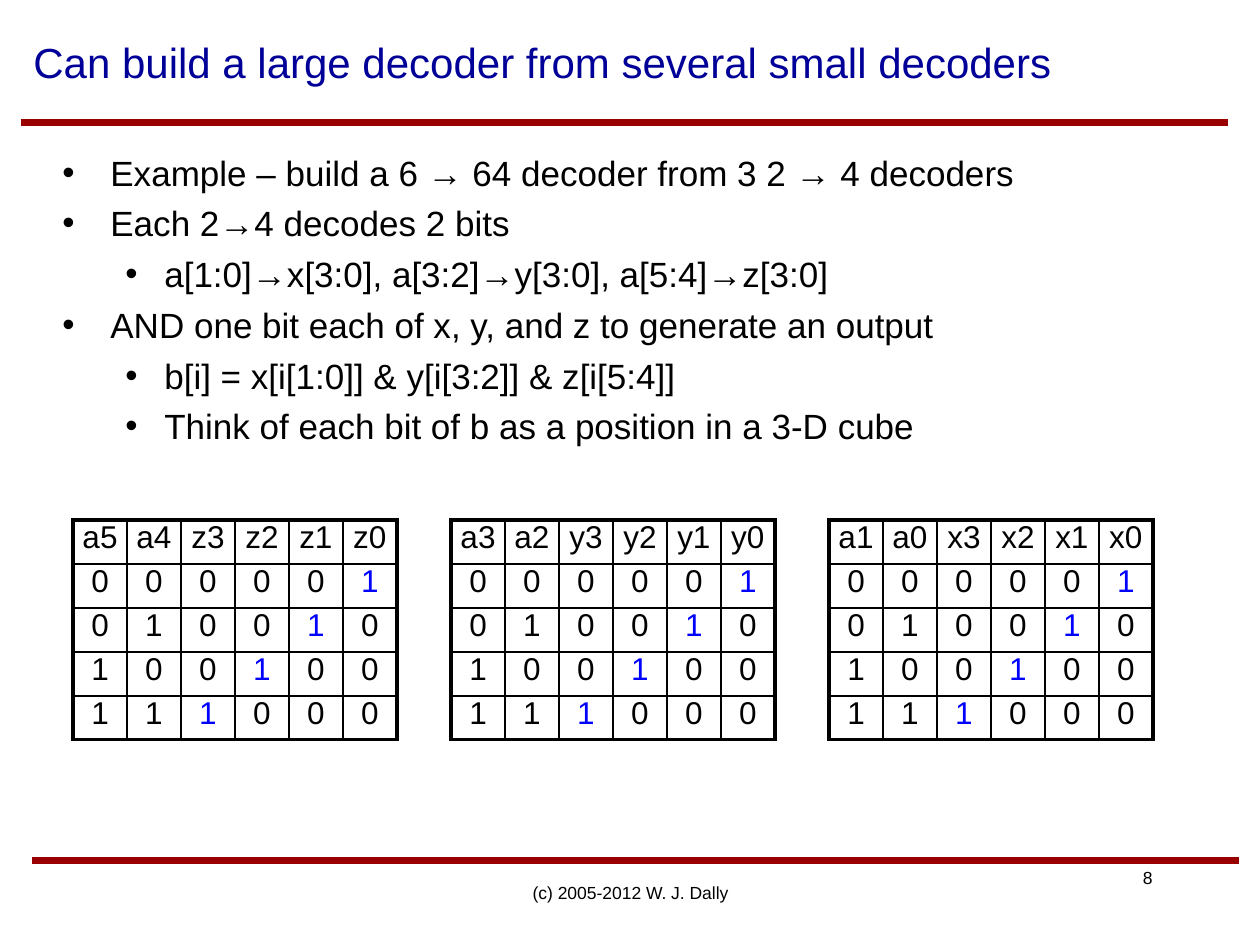
from lxml import etree
from pptx import Presentation
from pptx.dml.color import RGBColor
from pptx.enum.shapes import MSO_CONNECTOR
from pptx.enum.text import MSO_ANCHOR, PP_ALIGN
from pptx.oxml.ns import qn
from pptx.util import Pt

# Content
TITLE = "Can build a large decoder from several small decoders"
BULLETS = [  # (level, text)
    (0, "Example – build a 6 → 64 decoder from 3 2 → 4 decoders"),
    (0, "Each 2→4 decodes 2 bits"),
    (1, "a[1:0]→x[3:0], a[3:2]→y[3:0], a[5:4]→z[3:0]"),
    (0, "AND one bit each of x, y, and z to generate an output"),
    (1, "b[i] = x[i[1:0]] & y[i[3:2]] & z[i[5:4]]"),
    (1, "Think of each bit of b as a position in a 3-D cube"),
]
DECODER_HEADERS = [
    ["a5", "a4", "z3", "z2", "z1", "z0"],
    ["a3", "a2", "y3", "y2", "y1", "y0"],
    ["a1", "a0", "x3", "x2", "x1", "x0"],
]
TRUTH_ROWS = ["000001", "010010", "100100", "111000"]
FOOTER = "(c) 2005-2012 W. J. Dally"
PAGE_NUMBER = "8"

# Look
COLORS = {"title": "000099", "rule": "990000", "text": "000000", "hot": "0000FF"}
FONT = "Arial"
LEFT, CENTER, RIGHT = PP_ALIGN.LEFT, PP_ALIGN.CENTER, PP_ALIGN.RIGHT
TOP, MIDDLE = MSO_ANCHOR.TOP, MSO_ANCHOR.MIDDLE
STRAIGHT = MSO_CONNECTOR.STRAIGHT

# Layout in px
PX_PER_INCH = 126
SLIDE_W, SLIDE_H = 1260, 945
RULES = [(21, 123), (32, 861)]  # left, y
RULE_W = 1207
TABLE_X, TABLE_Y, TABLE_PITCH = 73, 520, 378
COL_W, ROW_H = 54, 44
INPUT_COLS = 2
INDENTS = [(48, 48), (102, 39)]  # left margin, hanging, by level
THIN, THICK = 1, 2.25


def px(n):
    return round(n * 914400 / PX_PER_INCH)


def style(paragraph, size, color, align=LEFT):
    paragraph.alignment = align
    font = paragraph.font
    font.name, font.size, font.bold = FONT, Pt(size), False
    font.color.rgb = RGBColor.from_string(COLORS[color])


def add_text(slide, box, text, size, color="text", align=LEFT, anchor=TOP, wrap=True):
    frame = slide.shapes.add_textbox(*map(px, box)).text_frame
    frame.word_wrap = wrap
    frame.vertical_anchor = anchor
    frame.text = text
    for paragraph in frame.paragraphs:
        style(paragraph, size, color, align)
    return frame


def add_bullet(paragraph, level):
    margin, hanging = INDENTS[level]
    paragraph.level = level
    paragraph.space_before = Pt(5)
    props = paragraph._p.get_or_add_pPr()
    props.set("marL", str(px(margin)))
    props.set("indent", str(-px(hanging)))
    etree.SubElement(props, qn("a:buFont"), typeface=FONT)
    etree.SubElement(props, qn("a:buChar"), char="•")


def set_borders(cell, widths):
    props = cell._tc.get_or_add_tcPr()
    for position, (side, width) in enumerate(widths.items()):
        line = etree.Element(qn(f"a:ln{side}"), w=str(Pt(width)))
        fill = etree.SubElement(line, qn("a:solidFill"))
        etree.SubElement(fill, qn("a:srgbClr"), val=COLORS["text"])
        props.insert(position, line)


def add_decoder_table(slide, left, rows):
    last_row, last_col = len(rows) - 1, len(rows[0]) - 1
    size = (COL_W * (last_col + 1), ROW_H * (last_row + 1))
    table = slide.shapes.add_table(
        last_row + 1, last_col + 1, *map(px, (left, TABLE_Y, *size))).table
    table.first_row = table.horz_banding = False
    for column in table.columns:
        column.width = px(COL_W)
    for r, row in enumerate(rows):
        table.rows[r].height = px(ROW_H)
        for c, value in enumerate(row):
            cell = table.cell(r, c)
            cell.margin_left = cell.margin_right = 0
            cell.margin_top = cell.margin_bottom = 0
            cell.text = value
            hot = value == "1" and c >= INPUT_COLS
            style(cell.text_frame.paragraphs[0], 18, "hot" if hot else "text", CENTER)
            cell.fill.background()
            outer = {"L": c == 0, "R": c == last_col, "T": r == 0, "B": r == last_row}
            set_borders(cell, {s: THICK if edge else THIN for s, edge in outer.items()})


def main():
    deck = Presentation()
    deck.slide_width, deck.slide_height = px(SLIDE_W), px(SLIDE_H)
    slide = deck.slides.add_slide(deck.slide_layouts[6])

    # Red rules above and below the content
    for left, y in RULES:
        rule = slide.shapes.add_connector(STRAIGHT, *map(px, (left, y, left + RULE_W, y)))
        rule.line.color.rgb = RGBColor.from_string(COLORS["rule"])
        rule.line.width = Pt(4)
        etree.SubElement(rule._element.spPr, qn("a:effectLst"))

    # Page number, footer and title
    add_text(slide, (945, 861, 220, 34), PAGE_NUMBER, 10, align=RIGHT)
    add_text(slide, (431, 861, 399, 63), FOOTER, 10, align=CENTER, anchor=MIDDLE, wrap=False)
    add_text(slide, (21, 0, 1239, 124), TITLE, 24, "title", anchor=MIDDLE)

    # Bullets
    body = add_text(slide, (50, 145, 1071, 615), "\n".join(t for _, t in BULLETS), 20)
    for paragraph, (level, _) in zip(body.paragraphs, BULLETS):
        add_bullet(paragraph, level)

    # One truth table per small decoder
    for i, header in enumerate(DECODER_HEADERS):
        add_decoder_table(slide, TABLE_X + i * TABLE_PITCH, [header, *TRUTH_ROWS])

    deck.save("out.pptx")


if __name__ == "__main__":
    main()
